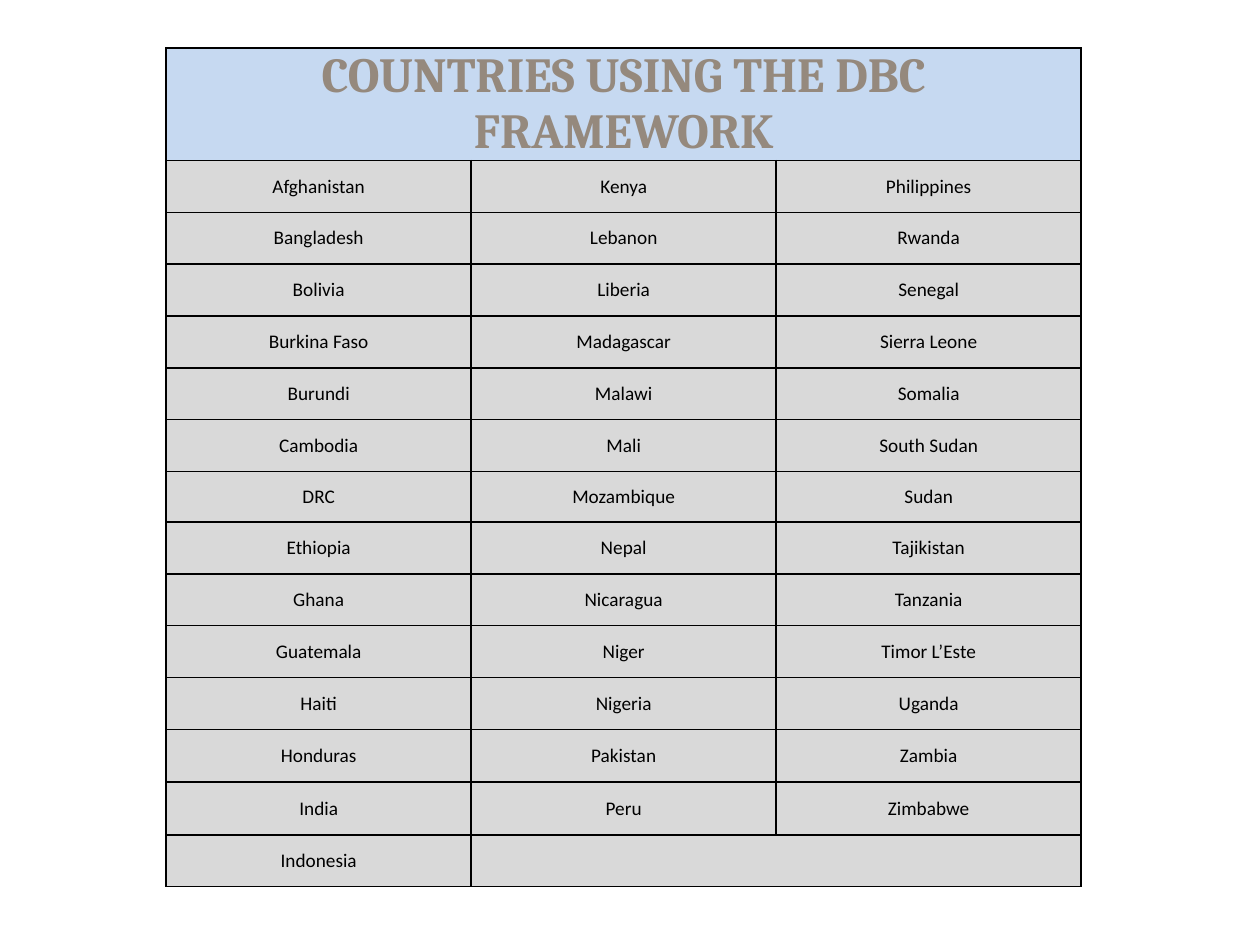
from lxml import etree
from pptx import Presentation
from pptx.dml.color import RGBColor
from pptx.enum import text
from pptx.oxml import ns
from pptx.util import Pt

# Content
TITLE = "COUNTRIES USING THE DBC FRAMEWORK"
COUNTRIES = [
    ["Afghanistan", "Bangladesh", "Bolivia", "Burkina Faso", "Burundi",
     "Cambodia", "DRC", "Ethiopia", "Ghana", "Guatemala", "Haiti",
     "Honduras", "India", "Indonesia"],
    ["Kenya", "Lebanon", "Liberia", "Madagascar", "Malawi", "Mali",
     "Mozambique", "Nepal", "Nicaragua", "Niger", "Nigeria", "Pakistan",
     "Peru"],
    ["Philippines", "Rwanda", "Senegal", "Sierra Leone", "Somalia",
     "South Sudan", "Sudan", "Tajikistan", "Tanzania", "Timor L’Este",
     "Uganda", "Zambia", "Zimbabwe"],
]
COLORS = {"header": "C6D9F1", "body": "D9D9D9", "title": "95897D",
          "text": "000000", "border": "000000"}

# Measures in points
LEFT, TOP, WIDTH, HEIGHT = 95, 27.4, 522.9, 484
HEADER_HEIGHT, ROW_HEIGHT = 41.8, 29.6
ODD_HEIGHTS = {7: 29, 12: 30.2, 13: 30.2}
SIDE_MARGIN = 5


def add_borders(cell):
    properties = cell._tc.get_or_add_tcPr()
    for side in ("lnL", "lnR", "lnT", "lnB"):
        line = etree.SubElement(properties, ns.qn(f"a:{side}"), w=str(Pt(1)))
        fill = etree.SubElement(line, ns.qn("a:solidFill"))
        etree.SubElement(fill, ns.qn("a:srgbClr"), val=COLORS["border"])


def style_cell(cell, fill):
    add_borders(cell)
    cell.fill.solid()
    cell.fill.fore_color.rgb = RGBColor.from_string(COLORS[fill])
    cell.margin_left = cell.margin_right = Pt(SIDE_MARGIN)
    cell.margin_top = cell.margin_bottom = 0


def write(cell, words, font, size, color, bold):
    cell.text = words
    para = cell.text_frame.paragraphs[0]
    para.alignment = text.PP_ALIGN.CENTER
    para.font.name = font
    para.font.size = Pt(size)
    para.font.bold = bold
    para.font.color.rgb = RGBColor.from_string(COLORS[color])
    return para


deck = Presentation()
deck.slide_width, deck.slide_height = Pt(720), Pt(540)
page = deck.slides.add_slide(deck.slide_layouts[6])

# Table grid
row_count = 1 + max(len(names) for names in COUNTRIES)
table = page.shapes.add_table(row_count, len(COUNTRIES), Pt(LEFT), Pt(TOP),
                              Pt(WIDTH), Pt(HEIGHT)).table
table.first_row = table.horz_banding = False
for column in table.columns:
    column.width = Pt(WIDTH / len(COUNTRIES))
for index, row in enumerate(table.rows):
    row.height = Pt(ODD_HEIGHTS.get(index, ROW_HEIGHT) if index else HEADER_HEIGHT)
    for cell in row.cells:
        style_cell(cell, "body" if index else "header")

# Header across all columns, and the empty cell at the end
last = len(COUNTRIES) - 1
table.cell(0, 0).merge(table.cell(0, last))
table.cell(row_count - 1, 1).merge(table.cell(row_count - 1, last))
heading = write(table.cell(0, 0), TITLE, "Cambria", 28, "title", True)
heading.space_after = Pt(12)

# Country names, column by column
for column, names in enumerate(COUNTRIES):
    for row, name in enumerate(names, start=1):
        cell = table.cell(row, column)
        cell.vertical_anchor = text.MSO_ANCHOR.MIDDLE
        write(cell, name, "Calibri", 11, "text", False)

deck.save("out.pptx")
